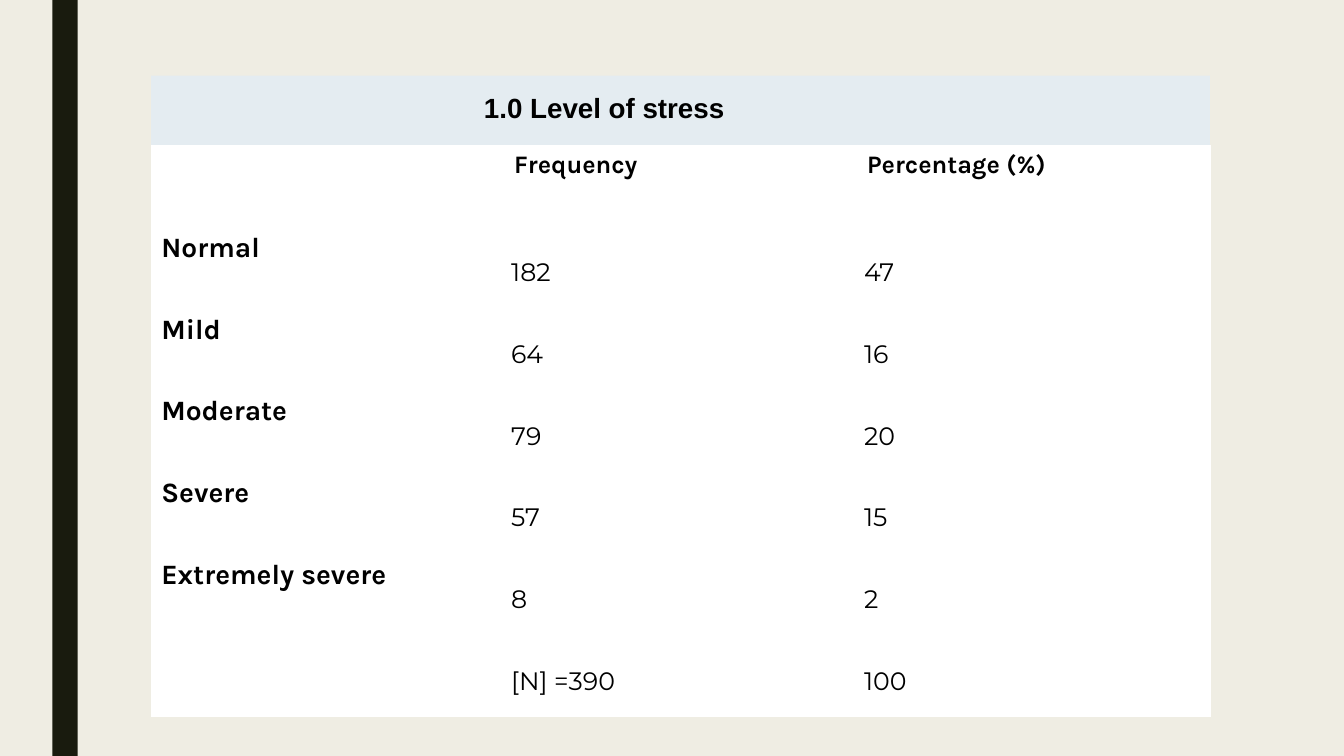
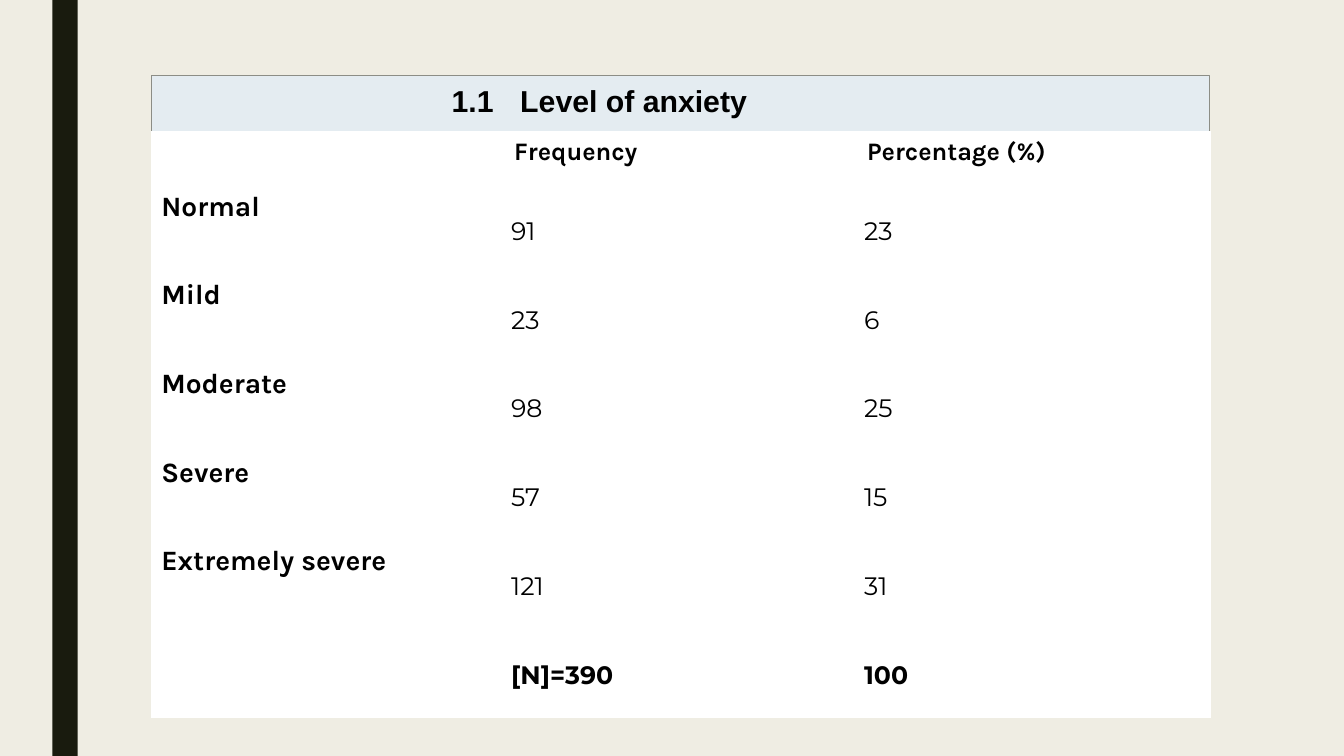
from pptx import Presentation
from pptx.dml.color import RGBColor
from pptx.enum.shapes import MSO_SHAPE
from pptx.enum.text import MSO_ANCHOR, MSO_AUTO_SIZE, PP_ALIGN
from pptx.oxml.ns import qn
from pptx.util import Inches, Pt
from lxml import etree

RECT = MSO_SHAPE.RECTANGLE
TOP = MSO_ANCHOR.TOP
NO_AUTOFIT = MSO_AUTO_SIZE.NONE
LEFT, JUSTIFY = PP_ALIGN.LEFT, PP_ALIGN.JUSTIFY

CREAM = RGBColor(0xEF, 0xED, 0xE3)
DARK = RGBColor(0x19, 0x1B, 0x0E)
PALE_BLUE = RGBColor(0xE4, 0xEC, 0xF1)
GREY = RGBColor(0x8C, 0x8D, 0x86)
WHITE = RGBColor(0xFF, 0xFF, 0xFF)
BLACK = RGBColor(0, 0, 0)

CONTENT_LEFT, CONTENT_TOP, CONTENT_WIDTH = 1.5, 0.75, 10.5
HEADER = ("", "Frequency", "Percentage (%)")
LEVELS = ("Normal", "Mild", "Moderate", "Severe", "Extremely severe", "")

SLIDES = [
    dict(title="1.0 Level of stress", size=19.8, height=0.69, indent=3.3,
         inset=0.15, outline=None, header_height=0.81, row_height=0.81,
         bold_total=False,
         values=[("182", "47"), ("64", "16"), ("79", "20"), ("57", "15"),
                 ("8", "2"), ("[N] =390", "100")]),
    dict(title="1.1\tLevel of anxiety", size=21.6, height=0.56, indent=2.98,
         inset=0.07, outline=GREY, header_height=0.53, row_height=0.88,
         bold_total=True,
         values=[("91", "23"), ("23", "6"), ("98", "25"), ("57", "15"),
                 ("121", "31"), ("[N]=390", "100")]),
]


def add_run(p, text, font, size, bold):
    r = p.add_run()
    r.text = text
    r.font.name = font
    r.font.size = Pt(size)
    r.font.bold = bold
    r.font.color.rgb = BLACK


def add_tab_stop(p, pos):
    tabs = etree.SubElement(p._p.get_or_add_pPr(), qn("a:tabLst"))
    etree.SubElement(tabs, qn("a:tab"), pos=str(Inches(pos)), algn="l")


prs = Presentation()
prs.slide_width, prs.slide_height = Inches(13.33), Inches(7.5)
master = prs.slide_master
master.background.fill.solid()
master.background.fill.fore_color.rgb = CREAM
layout = prs.slide_layouts.get_by_name("Title Only")

for number, data in enumerate(SLIDES):
    s = prs.slides.add_slide(layout)
    if number == 0:
        band = s.shapes.add_shape(RECT, Inches(0.52), 0, Inches(0.25), prs.slide_height)
        band.shadow.inherit = False
        band.fill.solid()
        band.fill.fore_color.rgb = DARK
        band.line.fill.background()
        master.shapes._spTree.insert(2, band._element)

    title = s.shapes.title
    title.left, title.top = Inches(CONTENT_LEFT), Inches(CONTENT_TOP)
    title.width, title.height = Inches(CONTENT_WIDTH), Inches(data["height"])
    title.fill.solid()
    title.fill.fore_color.rgb = PALE_BLUE
    if data["outline"]:
        title.line.color.rgb = data["outline"]
        title.line.width = Pt(0.75)
    tf = title.text_frame
    tf.auto_size = NO_AUTOFIT
    tf.vertical_anchor = TOP
    tf.margin_left, tf.margin_top = Inches(data["indent"]), Inches(data["inset"])
    p = tf.paragraphs[0]
    p.alignment = LEFT
    if "\t" in data["title"]:
        add_tab_stop(p, 0.68)
    add_run(p, data["title"], "Arial", data["size"], True)

    rows = [HEADER] + [(level, *pair) for level, pair in zip(LEVELS, data["values"])]
    heights = [data["header_height"]] + [data["row_height"]] * len(LEVELS)
    frame = s.shapes.add_table(
        len(rows), len(HEADER), Inches(CONTENT_LEFT), Inches(CONTENT_TOP + data["height"]),
        Inches(CONTENT_WIDTH), Inches(sum(heights)))
    table = frame.table
    table.horz_banding = False
    for i, (row, height) in enumerate(zip(rows, heights)):
        table.rows[i].height = Inches(height)
        for j, text in enumerate(row):
            cell = table.cell(i, j)
            cell.fill.solid()
            cell.fill.fore_color.rgb = WHITE
            if not text:
                continue
            p = cell.text_frame.paragraphs[0]
            if i == 0:
                add_run(p, text, "Karla", 18, True)
            elif j == 0:
                add_run(p, text, "Karla", 20, True)
            else:
                cell.margin_left = cell.margin_right = Inches(0.07)
                cell.margin_top = cell.margin_bottom = 0
                p.alignment = JUSTIFY
                p.line_spacing = 2.0
                p.space_after = Pt(10)
                is_total = i == len(rows) - 1
                add_run(p, text, "Montserrat", 18, is_total and data["bold_total"])

prs.save("out.pptx")
